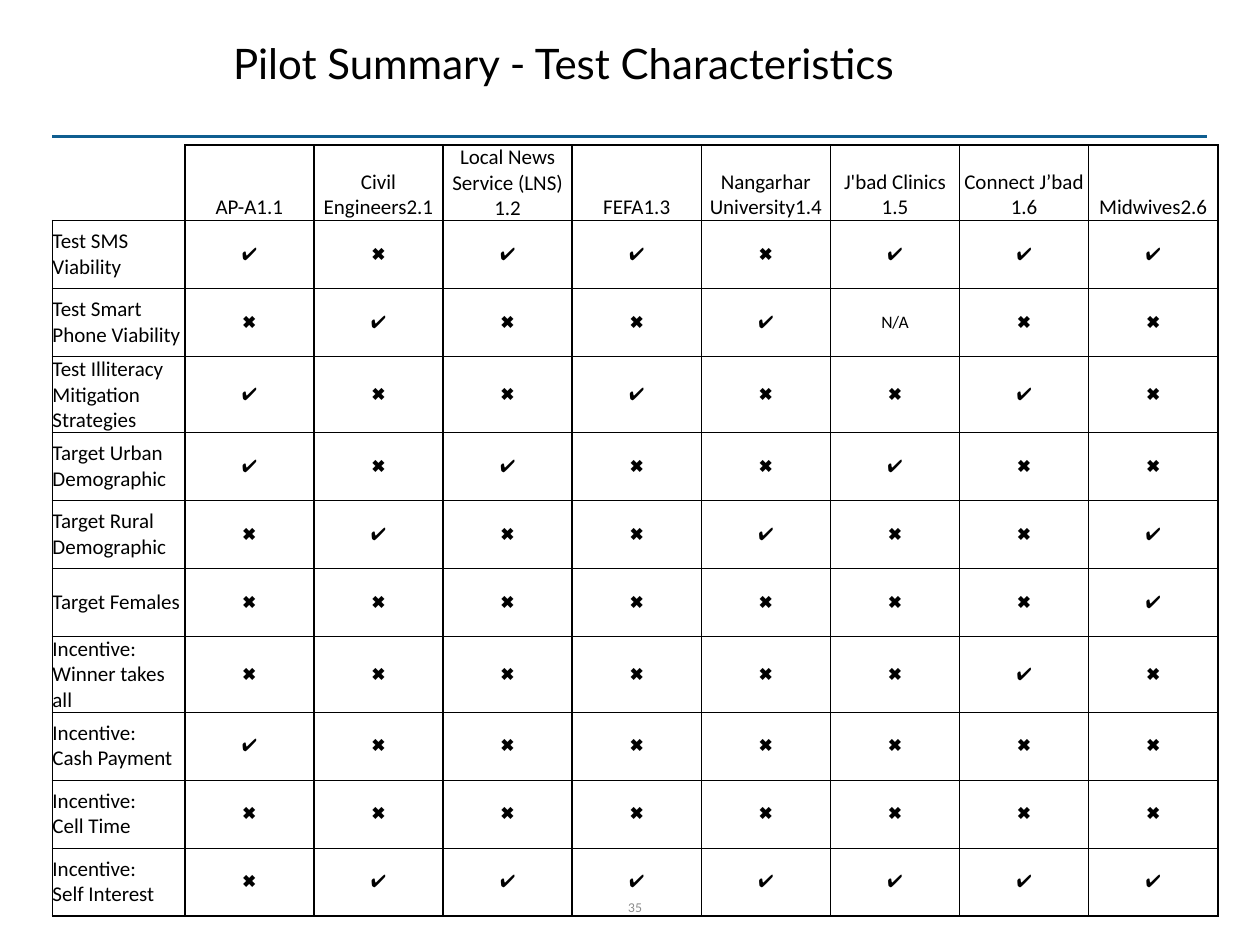
from dataclasses import dataclass

from lxml.etree import SubElement
from pptx import Presentation
from pptx.dml.color import RGBColor
from pptx.enum.shapes import MSO_CONNECTOR as Connector
from pptx.enum.text import MSO_ANCHOR as Anchor, PP_ALIGN as Align
from pptx.oxml.ns import qn
from pptx.util import Emu, Inches, Pt

# The page is a grid of 120 columns by 90 rows of equal squares
WIDTH, HEIGHT = Inches(10), Inches(7.5)
UNIT = WIDTH / 120
BLACK, GREY, BLUE = "000000", "898989", "0F5E90"
THICK, THIN = 1, 0.5


@dataclass
class Characteristic:
    label: str
    marks: str


PILOTS = ["AP-A1.1", "Civil Engineers2.1", "Local News Service (LNS) 1.2", "FEFA1.3",
          "Nangarhar University1.4", "J'bad Clinics\n1.5", "Connect J’bad 1.6", "Midwives2.6"]
CHARACTERISTICS = [
    Characteristic("Test SMS Viability", "✔ ✖ ✔ ✔ ✖ ✔ ✔ ✔"),
    Characteristic("Test Smart Phone Viability", "✖ ✔ ✖ ✖ ✔ N/A ✖ ✖"),
    Characteristic("Test Illiteracy Mitigation Strategies", "✔ ✖ ✖ ✔ ✖ ✖ ✔ ✖"),
    Characteristic("Target Urban Demographic", "✔ ✖ ✔ ✖ ✖ ✔ ✖ ✖"),
    Characteristic("Target Rural Demographic", "✖ ✔ ✖ ✖ ✔ ✖ ✖ ✔"),
    Characteristic("Target Females", "✖ ✖ ✖ ✖ ✖ ✖ ✖ ✔"),
    Characteristic("Incentive:\nWinner takes all", "✖ ✖ ✖ ✖ ✖ ✖ ✔ ✖"),
    Characteristic("Incentive:\nCash Payment", "✔ ✖ ✖ ✖ ✖ ✖ ✖ ✖"),
    Characteristic("Incentive:\nCell Time", "✖ ✖ ✖ ✖ ✖ ✖ ✖ ✖"),
    Characteristic("Incentive:\nSelf Interest", "✖ ✔ ✔ ✔ ✔ ✔ ✔ ✔"),
]


def grid(*counts: float) -> list[Emu]:
    return [Emu(round(count * UNIT)) for count in counts]


def color(value: str) -> RGBColor:
    return RGBColor.from_string(value)


def write(frame, text: str, *, size: float, font: str = "Calibri", fill: str = BLACK,
          align=Align.LEFT, anchor=Anchor.MIDDLE, baseline: int = 0) -> None:
    frame.word_wrap = True
    frame.vertical_anchor = anchor
    for index, line in enumerate(text.split("\n")):
        para = frame.add_paragraph() if index else frame.paragraphs[0]
        para.alignment = align
        span = para.add_run()
        span.text = line
        span.font.size, span.font.name = Pt(size), font
        span.font.color.rgb = color(fill)
        if baseline:
            span.font._element.set("baseline", str(baseline))


def set_borders(cell, *, left: float, right: float, top: float, bottom: float) -> None:
    properties = cell._tc.get_or_add_tcPr()
    for side, weight in zip("LRTB", (left, right, top, bottom)):
        line = SubElement(properties, qn(f"a:ln{side}"), w=str(Pt(weight)))
        if weight:
            solid = SubElement(line, qn("a:solidFill"))
            SubElement(solid, qn("a:srgbClr"), val=BLACK)
        else:
            SubElement(line, qn("a:noFill"))


def fill_cell(cell, text: str, *, borders: dict, **style) -> None:
    set_borders(cell, **borders)
    cell.fill.background()
    if text:
        cell.margin_left = cell.margin_right = cell.margin_top = cell.margin_bottom = 0
        write(cell.text_frame, text, **style)
        cell.vertical_anchor = style.get("anchor", Anchor.MIDDLE)


def add_summary_table(page) -> None:
    row_count, column_count = len(CHARACTERISTICS) + 1, len(PILOTS) + 1
    table = page.shapes.add_table(row_count, column_count, *grid(5, 13.8, 111, 72)).table
    table.first_row = table.horz_banding = False
    for index, column in enumerate(table.columns):
        column.width, = grid(12.3 if index else 12.6)
    for index, row in enumerate(table.rows):
        row.height, = grid(6.48 if index else 7.2)

    # Pilot names, with an open corner at the left
    fill_cell(table.cell(0, 0), "", borders=dict(left=0, right=THICK, top=0, bottom=THICK))
    boxed = dict(left=THICK, right=THICK, top=THICK, bottom=THICK)
    for column, pilot in enumerate(PILOTS, 1):
        fill_cell(table.cell(0, column), pilot, borders=boxed, size=12,
                  align=Align.CENTER, anchor=Anchor.BOTTOM)

    # One row for each characteristic
    for row, item in enumerate(CHARACTERISTICS, 1):
        borders = dict(left=THICK, right=THICK, top=THICK if row == 1 else THIN,
                       bottom=THICK if row == row_count - 1 else THIN)
        fill_cell(table.cell(row, 0), item.label, borders=borders, size=12)
        for column, mark in enumerate(item.marks.split(), 1):
            fill_cell(table.cell(row, column), mark, borders=borders, size=10,
                      align=Align.CENTER)


def main() -> None:
    deck = Presentation()
    deck.slide_width, deck.slide_height = WIDTH, HEIGHT
    page = deck.slides.add_slide(deck.slide_layouts[5])

    # Page number, set below the baseline
    number = page.shapes.add_textbox(*grid(17, 83.4, 87, 4.8))
    write(number.text_frame, "35", size=12, font="Lato", fill=GREY,
          align=Align.CENTER, baseline=-25000)

    # Title and the rule under it
    title = page.shapes.title
    title.left, title.top, title.width, title.height = grid(21, 2, 94, 8)
    write(title.text_frame, "Pilot Summary - Test Characteristics", size=24, font="Lato")
    rule = page.shapes.add_connector(Connector.STRAIGHT, *grid(5, 13, 115, 13))
    rule.line.color.rgb, rule.line.width = color(BLUE), Pt(1.75)
    SubElement(rule._element.spPr, qn("a:effectLst"))

    add_summary_table(page)
    deck.save("out.pptx")


if __name__ == "__main__":
    main()
